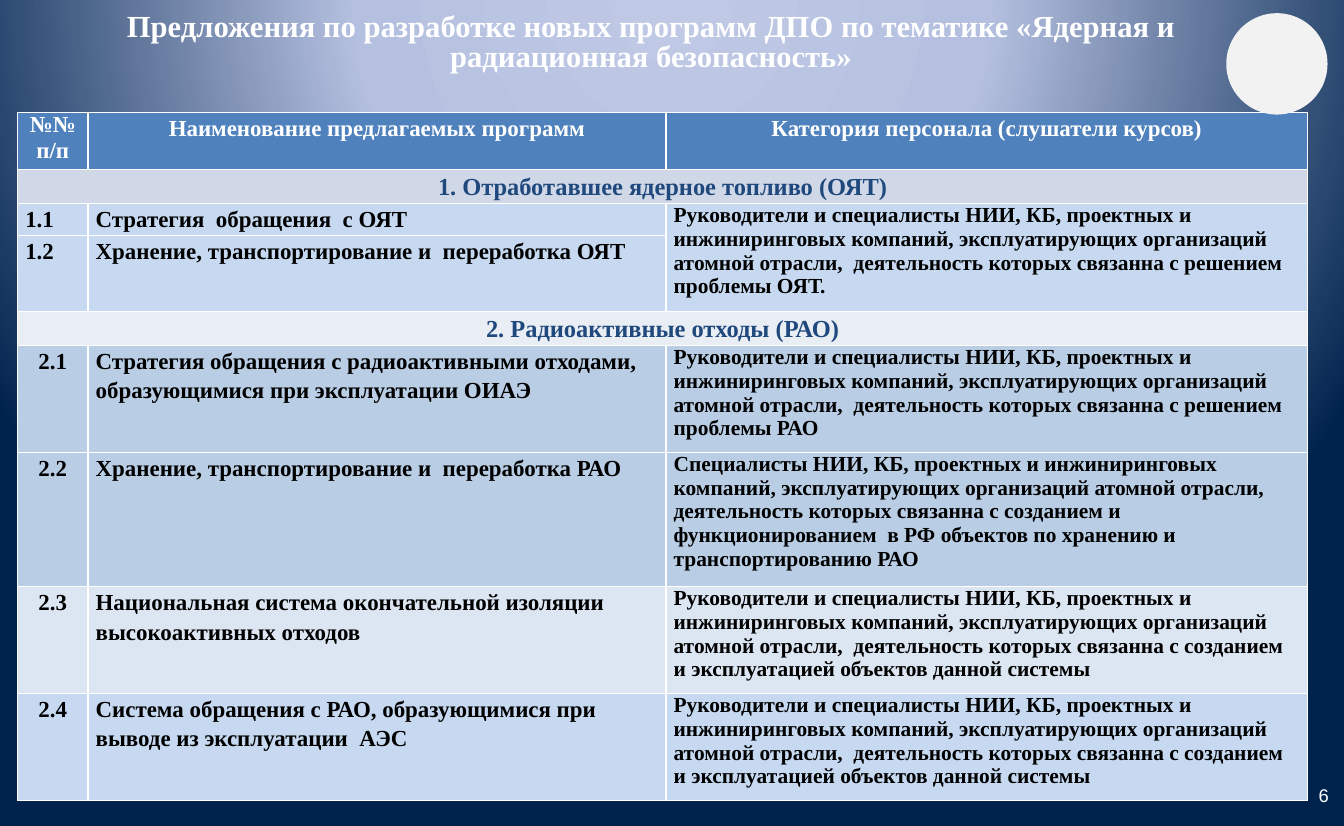
import pptx
import pptx.util
import pptx.dml.color
import pptx.enum.text
import pptx.enum.shapes
import pptx.oxml
import pptx.oxml.ns

WIDTH, HEIGHT = 12.21, 7.5
SERIF, SANS = "Times New Roman", "Arial"
WHITE, BLACK, NAVY = "FFFFFF", "000000", "1F497D"
LEFT, CENTER, RIGHT = (getattr(pptx.enum.text.PP_ALIGN, n) for n in ("LEFT", "CENTER", "RIGHT"))
TOP, MIDDLE = pptx.enum.text.MSO_ANCHOR.TOP, pptx.enum.text.MSO_ANCHOR.MIDDLE

COLS = [0.64, 5.25, 5.83]
ROWS = [0.52, 0.31, 0.29, 0.69, 0.31, 0.97, 1.22, 0.97, 0.97]
HEADS = ["№№\nп/п", "Наименование предлагаемых программ", "Категория персонала (слушатели курсов)"]
SECTIONS = {
    1: ("1. Отработавшее ядерное топливо (ОЯТ)", "D0D8E8"),
    4: ("2. Радиоактивные отходы (РАО)", "E9EDF4"),
}
STAFF = ("Руководители и специалисты НИИ, КБ, проектных и инжиниринговых компаний, "
         "эксплуатирующих организаций атомной отрасли,  деятельность которых связанна с ")
SYSTEM_STAFF = STAFF + "созданием и эксплуатацией объектов данной системы"
STORAGE_STAFF = ("Специалисты НИИ, КБ, проектных и инжиниринговых компаний, "
                 "эксплуатирующих организаций атомной отрасли,  деятельность которых связанна с "
                 "созданием и функционированием  в РФ объектов по хранению и транспортированию РАО")
PROGRAMS = {
    2: ("1.1", "Стратегия  обращения  с ОЯТ", STAFF + "решением проблемы ОЯТ.", "C6D9F1", LEFT),
    3: ("1.2", "Хранение, транспортирование и  переработка ОЯТ", None, "C6D9F1", LEFT),
    5: ("2.1", "Стратегия обращения с радиоактивными отходами, образующимися при эксплуатации ОИАЭ",
        STAFF + "решением проблемы РАО", "B9CDE5", CENTER),
    6: ("2.2", "Хранение, транспортирование и  переработка РАО", STORAGE_STAFF, "B9CDE5", CENTER),
    7: ("2.3", "Национальная система окончательной изоляции высокоактивных отходов",
        SYSTEM_STAFF, "DCE6F2", CENTER),
    8: ("2.4", "Система обращения с РАО, образующимися при выводе из эксплуатации  АЭС",
        SYSTEM_STAFF, "C6D9F1", CENTER),
}


def rgb(value):
    return pptx.dml.color.RGBColor.from_string(value)


def inches(*values):
    return [pptx.util.Inches(v) for v in values]


def place(sp, box):
    sp.left, sp.top, sp.width, sp.height = inches(*box)


def write(tf, text, size, color, align=LEFT, spacing=1.0, font=SERIF, bold=True):
    for i, line in enumerate(text.split("\n")):
        p = tf.add_paragraph() if i else tf.paragraphs[0]
        p.alignment, p.line_spacing = align, spacing
        p.space_before = p.space_after = pptx.util.Pt(0)
        r = p.add_run()
        r.text = line
        r.font.name, r.font.size, r.font.bold = font, pptx.util.Pt(size), bold
        r.font.color.rgb = rgb(color)


def background(s, stops):
    s.background.fill.gradient()
    grad = s.element.find(".//" + pptx.oxml.ns.qn("a:gradFill"))
    for child in list(grad):
        grad.remove(child)
    ns = pptx.oxml.ns.nsdecls("a")
    marks = "".join(f'<a:gs pos="{pos * 1000}"><a:srgbClr val="{color}"/></a:gs>' for pos, color in stops)
    grad.append(pptx.oxml.parse_xml(f"<a:gsLst {ns}>{marks}</a:gsLst>"))
    grad.append(pptx.oxml.parse_xml(
        f'<a:path {ns} path="circle"><a:fillToRect l="50000" t="-80000" r="50000" b="180000"/></a:path>'))


def title(s, box):
    sp = s.shapes.title
    place(sp, box)
    tf = sp.text_frame
    tf.word_wrap, tf.vertical_anchor = True, TOP
    tf.auto_size = pptx.enum.text.MSO_AUTO_SIZE.NONE
    tf.margin_left = tf.margin_top = tf.margin_right = tf.margin_bottom = 0
    write(tf, "Предложения по разработке новых программ ДПО по тематике "
              "«Ядерная и радиационная безопасность»", 20, WHITE, CENTER, 0.8)


def page_number(s, box):
    tf = s.shapes.add_textbox(*inches(*box)).text_frame
    tf.word_wrap, tf.vertical_anchor = True, MIDDLE
    write(tf, "6", 12, WHITE, RIGHT, font=SANS, bold=False)


def emblem(s, box):
    sp = s.shapes.add_shape(pptx.enum.shapes.MSO_SHAPE.OVAL, *inches(*box))
    sp.shadow.inherit = False
    sp.fill.solid()
    sp.fill.fore_color.rgb = rgb("F2F2F2")
    sp.line.fill.background()


def format_cell(cell, fill):
    cell.margin_left, cell.margin_right, cell.margin_top, cell.margin_bottom = inches(0.07, 0.07, 0, 0)
    pr = cell._tc.get_or_add_tcPr()
    for side in ("lnL", "lnR", "lnT", "lnB"):
        pr.append(pptx.oxml.parse_xml(
            f'<a:{side} {pptx.oxml.ns.nsdecls("a")} w="12700"><a:solidFill>'
            f'<a:srgbClr val="{WHITE}"/></a:solidFill></a:{side}>'))
    cell.fill.solid()
    cell.fill.fore_color.rgb = rgb(fill)


def program_table(s, box):
    table = s.shapes.add_table(len(ROWS), len(COLS), *inches(*box)).table
    table.horz_banding = False
    for col, share in zip(table.columns, COLS):
        col.width = pptx.util.Inches(box[2] * share / sum(COLS))
    for row, share in zip(table.rows, ROWS):
        row.height = pptx.util.Inches(box[3] * share / sum(ROWS))

    for c, head in enumerate(HEADS):
        format_cell(table.cell(0, c), "4F81BD")
        write(table.cell(0, c).text_frame, head, 15, WHITE, CENTER, 1.15 if c else 1.0)
    for i, (name, fill) in SECTIONS.items():
        for c in range(len(COLS)):
            format_cell(table.cell(i, c), fill)
        table.cell(i, 0).merge(table.cell(i, len(COLS) - 1))
        write(table.cell(i, 0).text_frame, name, 16, NAVY, CENTER, 1.15)
    for i, (number, name, staff, fill, align) in PROGRAMS.items():
        for c in range(len(COLS)):
            format_cell(table.cell(i, c), fill)
        write(table.cell(i, 0).text_frame, number, 15, BLACK, align, 1.15)
        write(table.cell(i, 1).text_frame, name, 15, BLACK, LEFT, 1.15)
        if staff:
            write(table.cell(i, 2).text_frame, staff, 14, BLACK)
        else:
            table.cell(i - 1, 2).merge(table.cell(i, 2))


def main():
    prs = pptx.Presentation()
    prs.slide_width, prs.slide_height = inches(WIDTH, HEIGHT)
    s = prs.slides.add_slide(prs.slide_layouts[5])
    background(s, [(0, "BFC9E5"), (40, "B5C0E0"), (100, "00234D")])
    title(s, (1, 0.13, 9.83, 0.97))
    page_number(s, (11.15, 7.02, 1.02, 0.4))
    program_table(s, (0.16, 1.02, sum(COLS), sum(ROWS)))
    emblem(s, (11.14, 0.12, 0.92, 0.92))
    prs.save("out.pptx")


if __name__ == "__main__":
    main()
